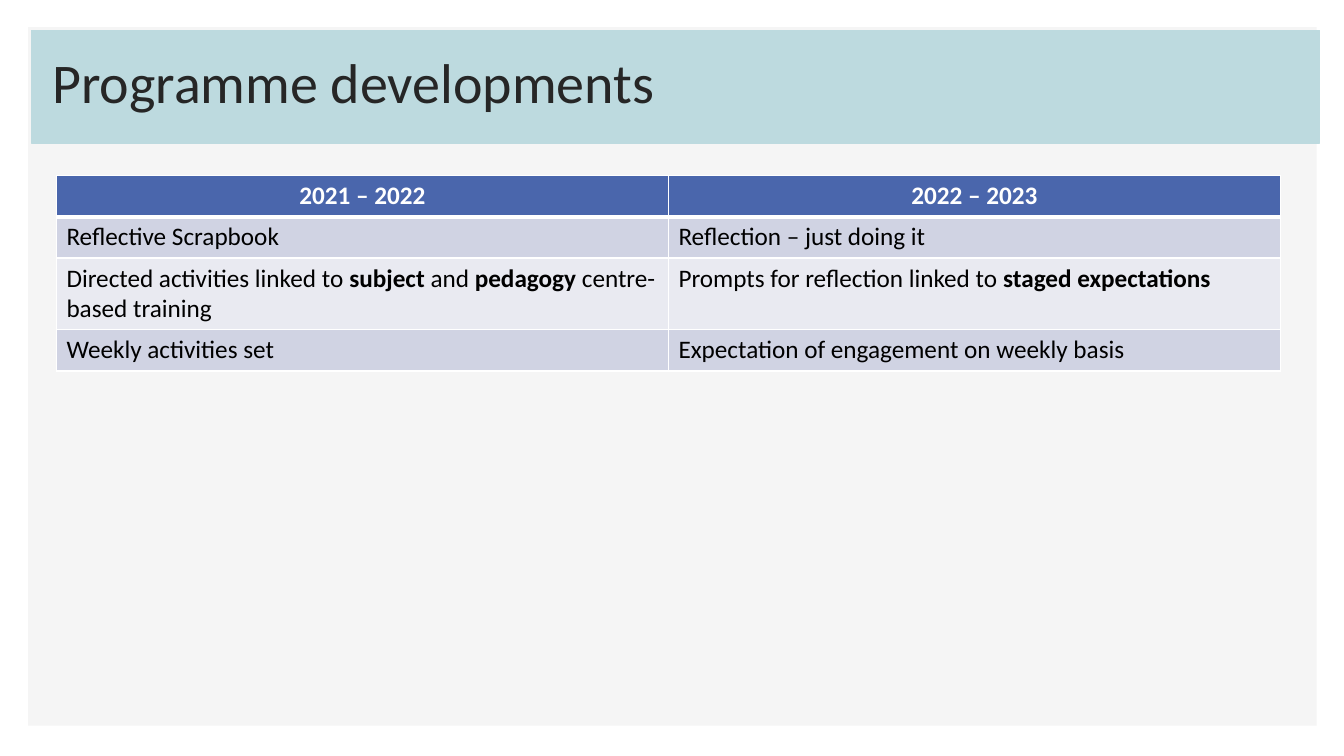
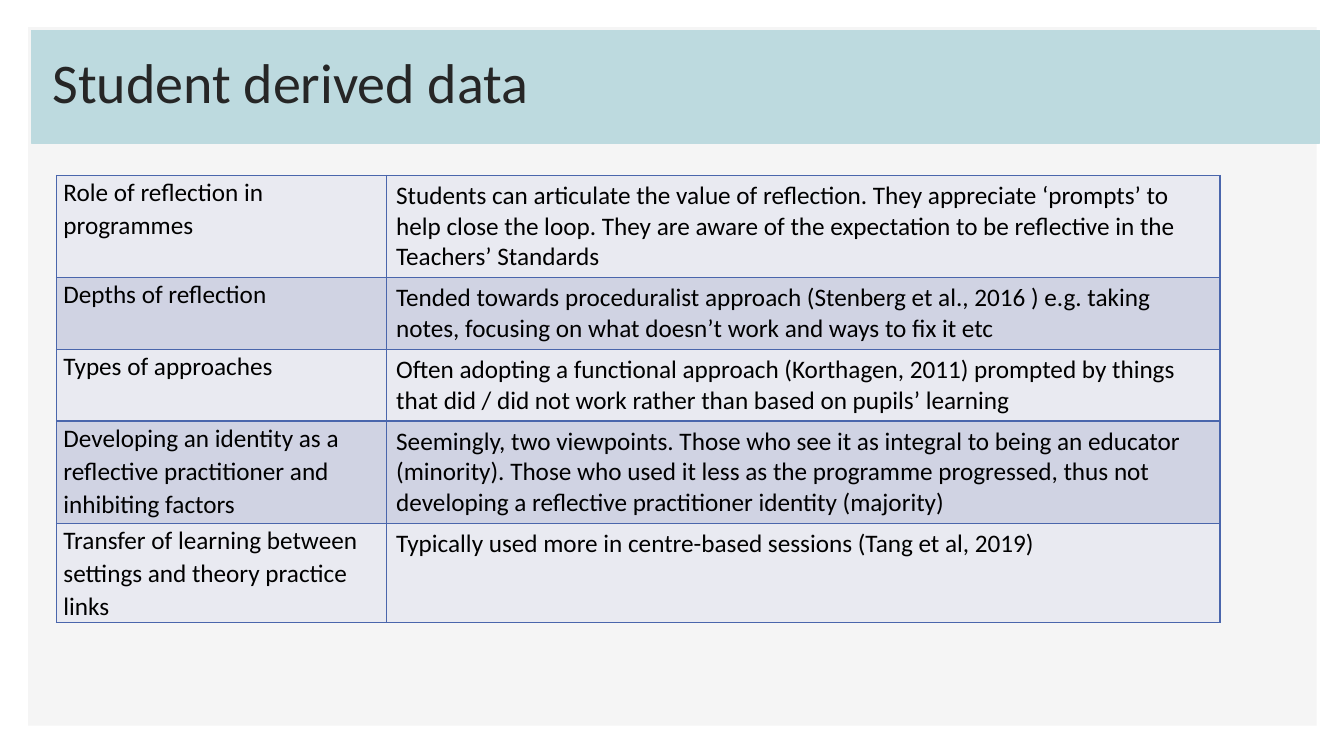
import lxml.etree
import pptx
import pptx.dml.color
import pptx.enum.shapes
import pptx.enum.text
import pptx.oxml.ns
import pptx.util

Inches = pptx.util.Inches
Pt = pptx.util.Pt
RGBColor = pptx.dml.color.RGBColor

FONT = "Calibri"
WHITE = RGBColor(0xFF, 0xFF, 0xFF)
BLACK = RGBColor(0x00, 0x00, 0x00)
PANEL_GREY = RGBColor(0xF5, 0xF5, 0xF5)
BAND_TEAL = RGBColor(0xBD, 0xDA, 0xDF)
TITLE_GREY = RGBColor(0x26, 0x26, 0x26)
BLUE = RGBColor(0x4A, 0x66, 0xAC)
ROW_DARK = RGBColor(0xD0, 0xD3, 0xE3)
ROW_LIGHT = RGBColor(0xE9, 0xEA, 0xF1)

PANEL_BOX = (0.28, 0.27, 12.78, 6.93)
BAND_BOX = (0.31, 0.3, 12.78, 1.12)
TITLE_BOX = (0.42, 0.5, 11.19, 0.7)
TABLE_LEFT, TABLE_TOP = 0.56, 1.74
ROW_HEIGHT = 0.41

PROGRAMME_ROWS = [
    ("2021 – 2022", "2022 – 2023"),
    ("Reflective Scrapbook", "Reflection – just doing it"),
    ("Directed activities linked to **subject **and **pedagogy** centre-based training",
     "Prompts for reflection linked to **staged expectations**"),
    ("Weekly activities set", "Expectation of engagement on weekly basis"),
]

STUDENT_ROWS = [
    ("Role of reflection in programmes",
     "Students can articulate the value of reflection. They appreciate ‘prompts’ to help "
     "close the loop. They are aware of the expectation to be reflective in the "
     "Teachers’ Standards"),
    ("Depths of reflection",
     "Tended towards proceduralist approach (Stenberg et al., 2016 ) e.g. taking notes, "
     "focusing on what doesn’t work and ways to fix it etc"),
    ("Types of approaches",
     "Often adopting a functional approach (Korthagen, 2011) prompted by things that did "
     "/ did not work rather than based on pupils’ learning"),
    ("Developing an identity as a reflective practitioner and inhibiting factors",
     "Seemingly, two viewpoints. Those who see it as integral to being an educator "
     "(minority). Those who used it less as the programme progressed, thus not developing "
     "a reflective practitioner identity (majority)"),
    ("Transfer of learning between settings and theory practice links",
     "Typically used more in centre-based sessions (Tang et al, 2019)"),
]


def add_block(slide, box, color):
    """Add a plain rectangle of one colour."""
    block = slide.shapes.add_shape(
        pptx.enum.shapes.MSO_SHAPE.RECTANGLE, *map(Inches, box))
    block.shadow.inherit = False
    block.fill.solid()
    block.fill.fore_color.rgb = color
    block.line.fill.background()
    return block


def add_titled_slide(deck, heading):
    """Add a slide with the grey panel, the teal band and its title."""
    slide = deck.slides.add_slide(deck.slide_layouts[5])
    add_block(slide, PANEL_BOX, PANEL_GREY)
    band = add_block(slide, BAND_BOX, BAND_TEAL)
    band.line.color.rgb = BAND_TEAL
    band.line.width = Pt(1)

    title = slide.shapes.title
    title.element.getparent().append(title.element)
    title.left, title.top, title.width, title.height = map(Inches, TITLE_BOX)
    frame = title.text_frame
    frame.text = heading
    frame.word_wrap = True
    frame.auto_size = pptx.enum.text.MSO_AUTO_SIZE.NONE
    frame.vertical_anchor = pptx.enum.text.MSO_ANCHOR.BOTTOM
    paragraph = frame.paragraphs[0]
    paragraph.alignment = pptx.enum.text.PP_ALIGN.LEFT
    paragraph.line_spacing = 0.9
    paragraph.font.name = FONT
    paragraph.font.size = Pt(40)
    paragraph.font.color.rgb = TITLE_GREY
    return slide


def set_borders(cell, color, top=1, bottom=1):
    """Draw the four borders of a cell, with widths in points."""
    properties = cell._tc.get_or_add_tcPr()
    widths = {"a:lnL": 1, "a:lnR": 1, "a:lnT": top, "a:lnB": bottom}
    for position, (tag, width) in enumerate(widths.items()):
        line = lxml.etree.Element(pptx.oxml.ns.qn(tag), w=str(Pt(width)))
        fill = lxml.etree.SubElement(line, pptx.oxml.ns.qn("a:solidFill"))
        lxml.etree.SubElement(fill, pptx.oxml.ns.qn("a:srgbClr"), val=str(color))
        properties.insert(position, line)


def write_cell(cell, text, fill, color=BLACK):
    """Fill a cell and write its text, with bold parts between double asterisks."""
    cell.fill.solid()
    cell.fill.fore_color.rgb = fill
    paragraph = cell.text_frame.paragraphs[0]
    paragraph.font.name = FONT
    paragraph.font.size = Pt(18)
    paragraph.font.color.rgb = color
    for index, part in enumerate(text.split("**")):
        if part:
            run = paragraph.add_run()
            run.text = part
            if index % 2:
                run.font.bold = True
    return paragraph


def add_grid(slide, rows, column_widths, has_header):
    """Add an empty table sized for the rows and return it."""
    table = slide.shapes.add_table(
        len(rows), len(column_widths), Inches(TABLE_LEFT), Inches(TABLE_TOP),
        Inches(sum(column_widths)), Inches(ROW_HEIGHT * len(rows))).table
    table.first_row = has_header
    table.horz_banding = False
    for column, width in zip(table.columns, column_widths):
        column.width = Inches(width)
    for row in table.rows:
        row.height = Inches(ROW_HEIGHT)
    return table


def add_programme_table(slide):
    """Compare the two programme years under a blue header."""
    table = add_grid(slide, PROGRAMME_ROWS, (6.07, 6.07), True)
    for r, row in enumerate(PROGRAMME_ROWS):
        for c, text in enumerate(row):
            cell = table.cell(r, c)
            if r == 0:
                paragraph = write_cell(cell, text, BLUE, WHITE)
                paragraph.font.bold = True
                paragraph.alignment = pptx.enum.text.PP_ALIGN.CENTER
            else:
                write_cell(cell, text, ROW_DARK if r % 2 else ROW_LIGHT)
            set_borders(cell, WHITE, top=3 if r == 1 else 1, bottom=3 if r == 0 else 1)


def add_student_table(slide):
    """List each theme beside what the students said."""
    table = add_grid(slide, STUDENT_ROWS, (3.27, 8.27), False)
    for r, row in enumerate(STUDENT_ROWS):
        for c, text in enumerate(row):
            cell = table.cell(r, c)
            paragraph = write_cell(cell, text, ROW_DARK if r % 2 else ROW_LIGHT)
            if c == 0:
                cell.margin_left = cell.margin_right = Inches(0.07)
                cell.margin_top = cell.margin_bottom = 0
                paragraph.line_spacing = 1.07
                paragraph.space_after = Pt(8)
            set_borders(cell, BLUE)


def main():
    """Build and save both slides."""
    deck = pptx.Presentation()
    deck.slide_width, deck.slide_height = Inches(13.33), Inches(7.5)
    add_programme_table(add_titled_slide(deck, "Programme developments"))
    add_student_table(add_titled_slide(deck, "Student derived data"))
    deck.save("out.pptx")


if __name__ == "__main__":
    main()
